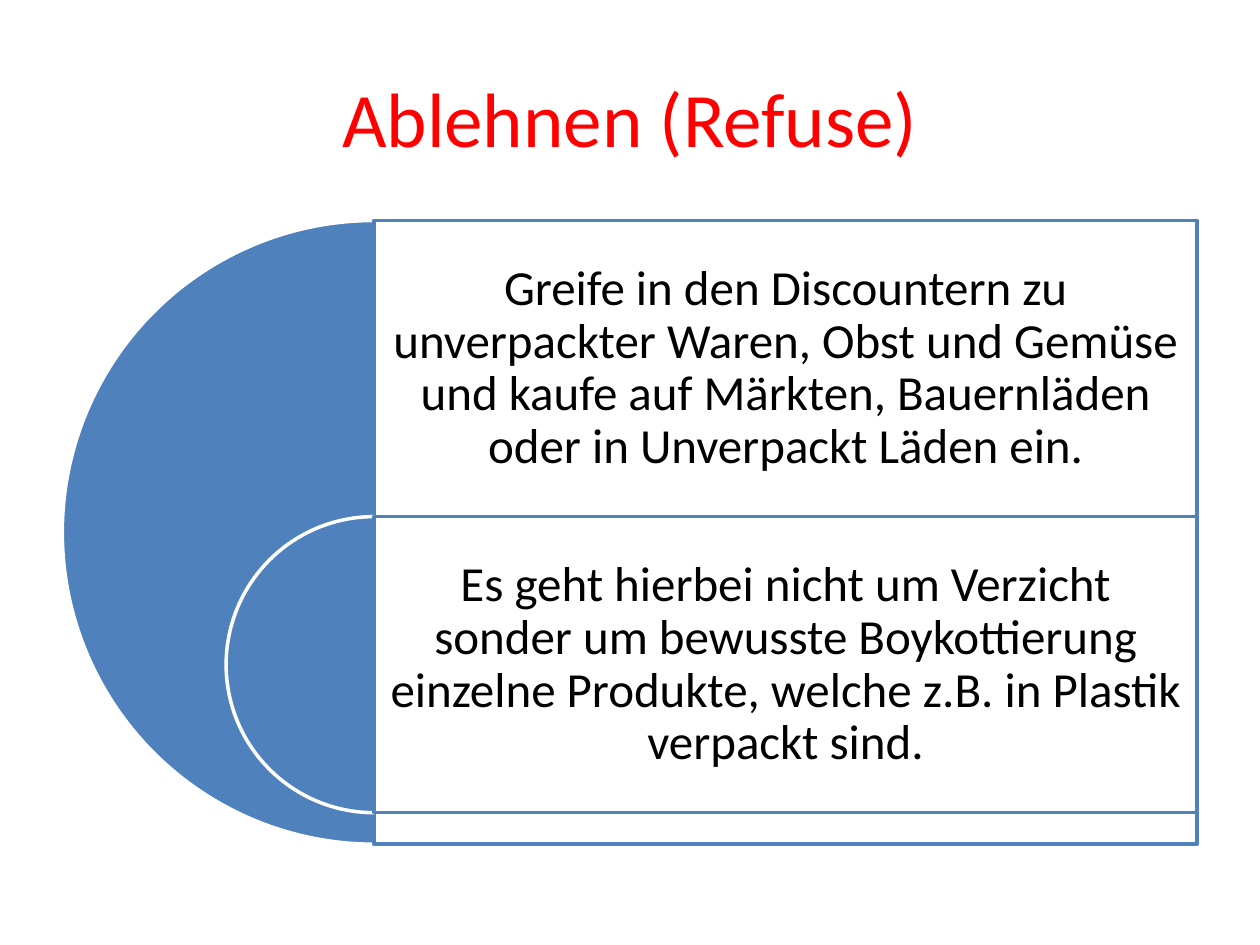
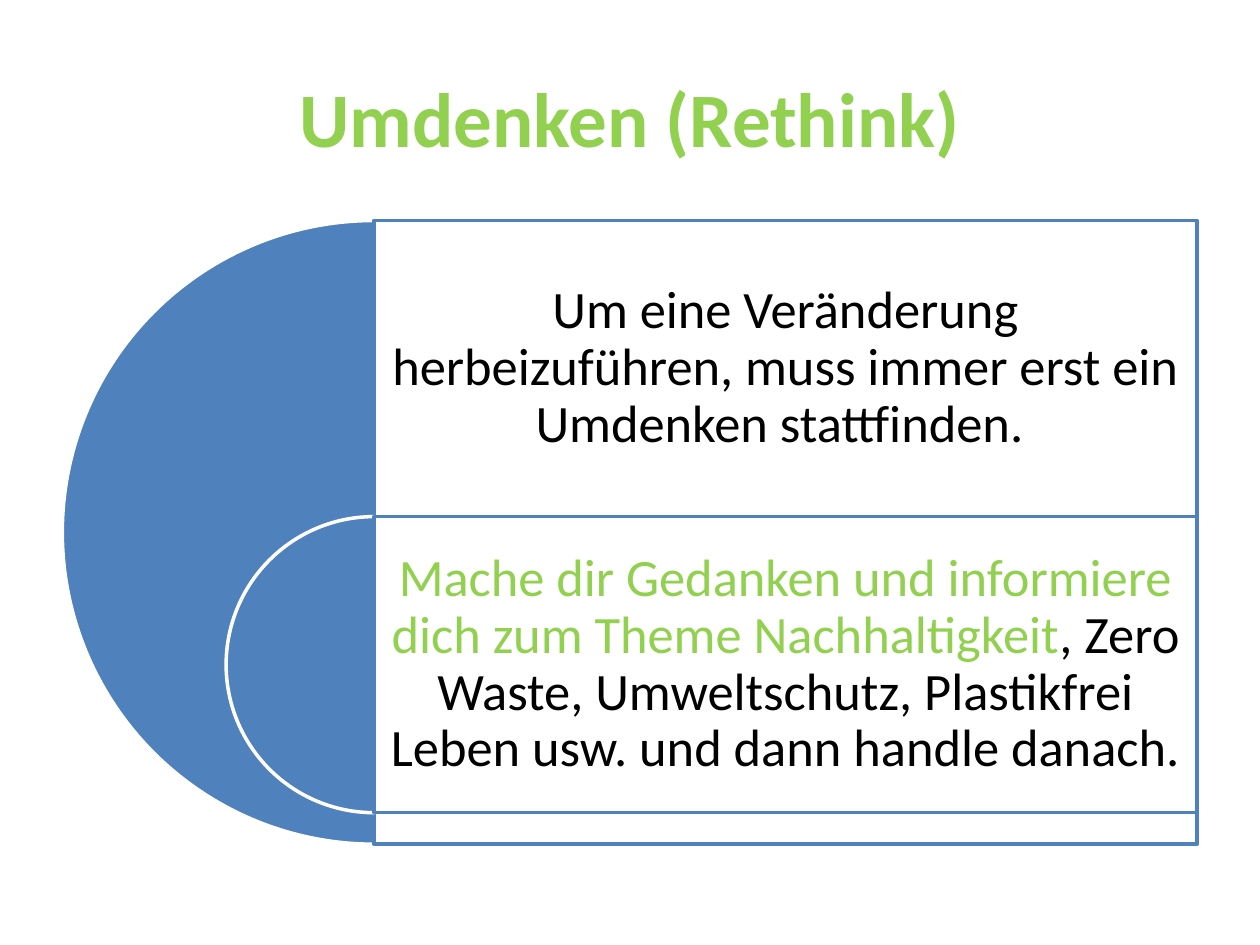
from lxml.etree import SubElement
from pptx import Presentation
from pptx.dml.color import RGBColor
from pptx.enum.shapes import MSO_SHAPE
from pptx.enum.text import MSO_ANCHOR, PP_ALIGN
from pptx.oxml.ns import qn
from pptx.util import Inches, Pt

COLORS = {
    "blue": "4F81BD",
    "white": "FFFFFF",
    "black": "000000",
    "red": "FF0000",
    "green": "92D050",
}
FONT = "Calibri"

# Each statement is a list of (text, colour) runs.
SLIDES = [
    {
        "title": "Ablehnen (Refuse)",
        "title_color": "red",
        "title_bold": False,
        "text_size": 28,
        "statements": [
            [("Greife in den Discountern zu unverpackter Waren, Obst und Gemüse "
              "und kaufe auf Märkten, Bauernläden oder in Unverpackt Läden ein.", "black")],
            [("Es geht hierbei nicht um Verzicht sonder um bewusste Boykottierung "
              "einzelne Produkte, welche z.B. in Plastik verpackt sind.", "black")],
        ],
    },
    {
        "title": "Umdenken (Rethink)",
        "title_color": "green",
        "title_bold": True,
        "text_size": 30,
        "statements": [
            [("Um eine Veränderung herbeizuführen, muss immer erst ein "
              "Umdenken stattfinden. ", "black")],
            [("Mache dir Gedanken und informiere dich zum Theme Nachhaltigkeit", "green"),
             (", Zero Waste, Umweltschutz, Plastikfrei Leben usw. "
              "und dann handle danach.", "black")],
        ],
    },
]

TITLE_BOX = (0.5, 0.3, 9, 1.25)
PANEL_LEFT, PANEL_TOP, PANEL_WIDTH = 2.97, 1.75, 6.53
STATEMENT_HEIGHT = 2.35
DIAMETERS = (4.95, 2.35)  # each half disc is as high as its panel
HALF_TURN = (54, 162)  # 90 and 270 degrees
FRAME_FORMAT = {
    "word_wrap": True,
    "vertical_anchor": MSO_ANCHOR.MIDDLE,
    **{f"margin_{side}": Inches(0.12) for side in ("left", "top", "right", "bottom")},
}


def rgb(name):
    return RGBColor.from_string(COLORS[name])


def inches(*lengths):
    return [Inches(length) for length in lengths]


def set_attributes(target, values):
    for name, value in values.items():
        setattr(target, name, value)


def add_run(paragraph, text, color, size, bold=False):
    run = paragraph.add_run()
    run.text = text
    set_attributes(run.font, {"name": FONT, "size": Pt(size), "bold": bold})
    run.font.color.rgb = rgb(color)


def add_title(slide, content):
    title = slide.shapes.title
    set_attributes(title, dict(zip(("left", "top", "width", "height"), inches(*TITLE_BOX))))
    title.text_frame.vertical_anchor = MSO_ANCHOR.MIDDLE
    paragraph = title.text_frame.paragraphs[0]
    paragraph.alignment = PP_ALIGN.CENTER
    add_run(paragraph, content["title"], content["title_color"], 44, content["title_bold"])


def add_outlined_shape(slide, kind, box, fill, line):
    shape = slide.shapes.add_shape(kind, *inches(*box))
    shape.shadow.inherit = False
    shape.fill.solid()
    shape.fill.fore_color.rgb = rgb(fill)
    shape.line.color.rgb = rgb(line)
    shape.line.width = Pt(2)
    return shape


def add_half_disc(slide, top, diameter):
    """Draw the left half of a disc whose centre lies on the panel's left edge."""
    box = (PANEL_LEFT - diameter / 2, top, diameter, diameter)
    disc = add_outlined_shape(slide, MSO_SHAPE.PIE, box, "blue", "white")
    for index, angle in enumerate(HALF_TURN):
        disc.adjustments[index] = angle


def add_panel(slide, top, height):
    """Draw a white panel at 90 % opacity."""
    box = (PANEL_LEFT, top, PANEL_WIDTH, height)
    panel = add_outlined_shape(slide, MSO_SHAPE.RECTANGLE, box, "white", "blue")
    fill_color = panel.fill._xPr.find(qn("a:solidFill"))[0]
    SubElement(fill_color, qn("a:alpha"), val="90000")


def add_statement(slide, top, runs, size):
    box = inches(PANEL_LEFT, top, PANEL_WIDTH, STATEMENT_HEIGHT)
    frame = slide.shapes.add_textbox(*box).text_frame
    set_attributes(frame, FRAME_FORMAT)
    paragraph = frame.paragraphs[0]
    set_attributes(paragraph, {"alignment": PP_ALIGN.CENTER, "line_spacing": 0.9})
    for text, color in runs:
        add_run(paragraph, text, color, size)


def build_slide(presentation, content):
    slide = presentation.slides.add_slide(presentation.slide_layouts[5])
    add_title(slide, content)
    for index, (diameter, runs) in enumerate(zip(DIAMETERS, content["statements"])):
        top = PANEL_TOP + index * STATEMENT_HEIGHT
        add_half_disc(slide, top, diameter)
        add_panel(slide, top, diameter)
        add_statement(slide, top, runs, content["text_size"])


def main():
    presentation = Presentation()
    presentation.slide_width = Inches(10)
    presentation.slide_height = Inches(7.5)
    for content in SLIDES:
        build_slide(presentation, content)
    presentation.save("out.pptx")


if __name__ == "__main__":
    main()
